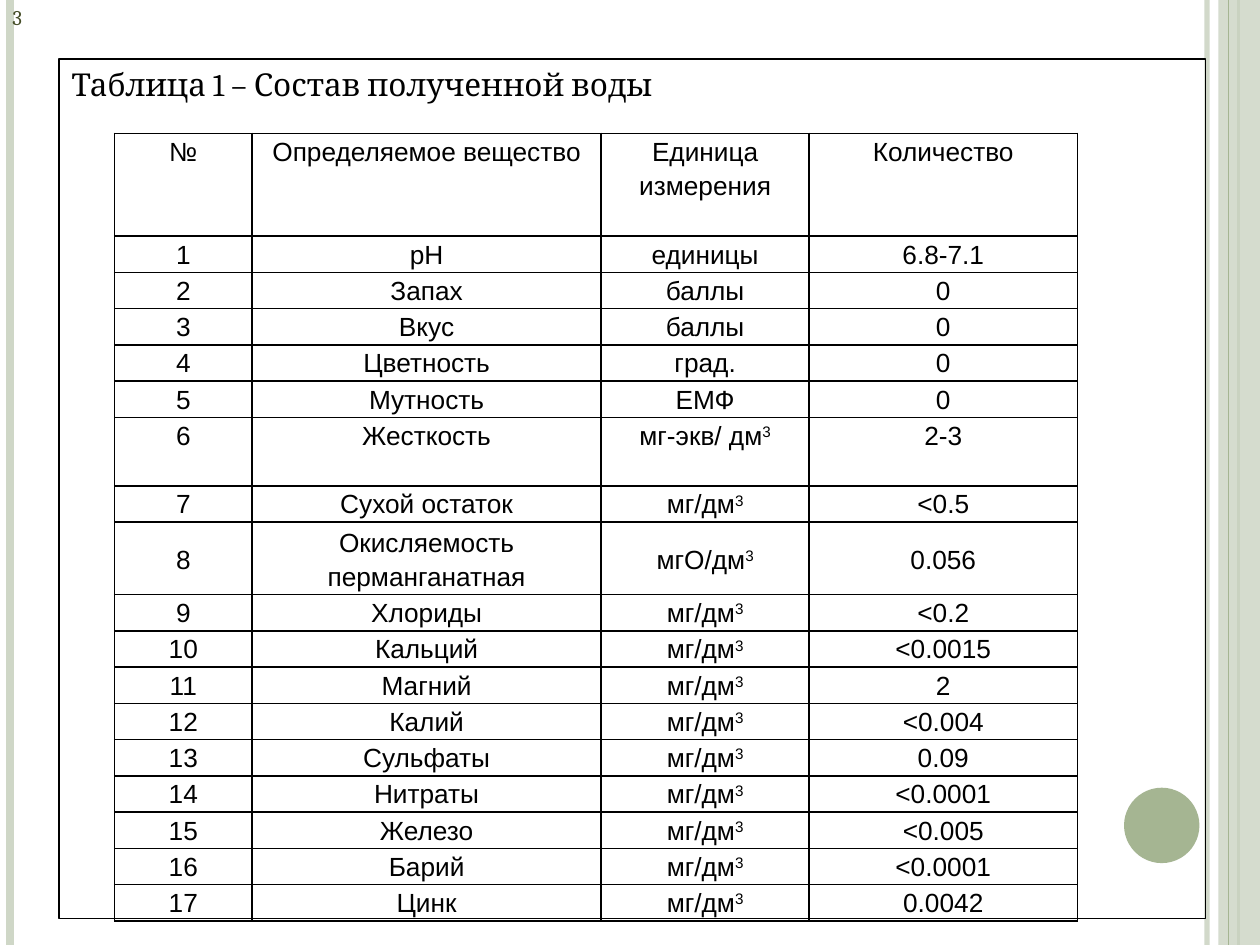
"""Build a slide with a table of the composition of treated water."""
from lxml import etree
from pptx import Presentation
from pptx import util as u
from pptx.dml.color import RGBColor
from pptx.enum import shapes, text
from pptx.oxml.ns import qn

BLACK, GREEN, PALE, DARK = "000000", "A5B592", "CFD7C7", "444D26"
PAGE_WIDTH, PAGE_HEIGHT = 25.4, 19.05
COLUMN_WIDTHS = [2.77, 7.04, 4.19, 5.41]
ROW_HEIGHT = 0.69
ROW_SPANS = {0: 3, 6: 2, 8: 2}
MIDDLE_ROW = 8
STRIPES = [(24.33, PALE, 3, 93), (0.2, PALE, 4.5, 100),
           (24.97, GREEN, 1.5, 100), (24.77, GREEN, 0.75, 100)]
HEADER = ["№", "Определяемое вещество", "Единица измерения", "Количество"]
SUBSTANCES = [
    ("pH", "единицы", "6.8-7.1"),
    ("Запах", "баллы", "0"),
    ("Вкус", "баллы", "0"),
    ("Цветность", "град.", "0"),
    ("Мутность", "ЕМФ", "0"),
    ("Жесткость", "мг-экв/ дм^3", "2-3"),
    ("Сухой остаток", "мг/дм^3", "<0.5"),
    ("Окисляемость перманганатная", "мгО/дм^3", "0.056"),
    ("Хлориды", "мг/дм^3", "<0.2"),
    ("Кальций", "мг/дм^3", "<0.0015"),
    ("Магний", "мг/дм^3", "2"),
    ("Калий", "мг/дм^3", "<0.004"),
    ("Сульфаты", "мг/дм^3", "0.09"),
    ("Нитраты", "мг/дм^3", "<0.0001"),
    ("Железо", "мг/дм^3", "<0.005"),
    ("Барий", "мг/дм^3", "<0.0001"),
    ("Цинк", "мг/дм^3", "0.0042"),
]


def color(value):
    """Turn a hex string into a colour."""
    return RGBColor.from_string(value)


def apply(target, values):
    """Set each named attribute of the target."""
    for name, value in values.items():
        setattr(target, name, value)


def set_alpha(holder, percent):
    """Make the solid colour inside an element partly transparent."""
    if percent < 100:
        tint = next(holder.iter(qn("a:srgbClr")))
        etree.SubElement(tint, qn("a:alpha"), val=str(percent * 1000))


class Painter:
    """Hold the style and the current page, and draw elements on it."""

    heading_font, table_font = "Cambria", "Arial"

    def __init__(self, page):
        """Remember the page."""
        self.page = page

    def add_words(self, para, words, size, font, tint=BLACK):
        """Add text to a paragraph, raising what follows a caret."""
        for index, part in enumerate(words.split("^")):
            span = para.add_run()
            span.text = part
            apply(span.font, {"size": u.Pt(size), "name": font})
            span.font.color.rgb = color(tint)
            if index:
                span.font._element.set("baseline", "30000")

    def stripe(self, x, tint, width, opacity):
        """Draw a vertical line over the whole page height."""
        line = self.page.shapes.add_connector(
            shapes.MSO_CONNECTOR.STRAIGHT, u.Cm(x), 0, u.Cm(x), u.Cm(PAGE_HEIGHT))
        line.line.color.rgb = color(tint)
        line.line.width = u.Pt(width)
        properties = line._element.spPr
        set_alpha(properties, opacity)
        etree.SubElement(properties, qn("a:effectLst"))

    def shape(self, kind, place, tint, opacity=100):
        """Draw a filled shape without an outline."""
        box = self.page.shapes.add_shape(kind, *map(u.Cm, place))
        box.shadow.inherit = False
        box.fill.solid()
        box.fill.fore_color.rgb = color(tint)
        box.line.fill.background()
        set_alpha(box._element.spPr, opacity)

    def body(self, words, place):
        """Frame the body placeholder and put the table caption in it."""
        box = self.page.placeholders[1]
        apply(box, dict(zip(("left", "top", "width", "height"), map(u.Cm, place))))
        box.line.color.rgb = color(BLACK)
        box.line.width = u.Pt(0.75)
        box.text_frame.auto_size = text.MSO_AUTO_SIZE.NONE
        para = box.text_frame.paragraphs[0]
        para.space_before = u.Pt(6)
        properties = para._p.get_or_add_pPr()
        indent = u.Cm(0.76)
        properties.set("marL", str(indent))
        properties.set("indent", str(-indent))
        etree.SubElement(properties, qn("a:buNone"))
        self.add_words(para, words, 18, self.heading_font)
        self.page.shapes._spTree.append(box._element)

    def number(self, words, place):
        """Add the page number."""
        box = self.page.shapes.add_textbox(*map(u.Cm, place))
        apply(box.text_frame, {"word_wrap": True,
                               "vertical_anchor": text.MSO_ANCHOR.MIDDLE})
        self.add_words(box.text_frame.paragraphs[0], words, 12, self.heading_font, DARK)

    def border(self, cell):
        """Draw all four borders of a cell."""
        properties = cell._tc.get_or_add_tcPr()
        for side in ("lnL", "lnR", "lnT", "lnB"):
            line = etree.SubElement(properties, qn("a:" + side), w=str(u.Pt(1)))
            fill = etree.SubElement(line, qn("a:solidFill"))
            etree.SubElement(fill, qn("a:srgbClr"), val=BLACK)

    def cell(self, cell, words, anchor):
        """Format a table cell and fill in its text."""
        margins = dict.fromkeys(
            ("margin_left", "margin_right", "margin_top", "margin_bottom"), 0)
        apply(cell, {**margins, "vertical_anchor": anchor})
        self.border(cell)
        cell.fill.background()
        para = cell.text_frame.paragraphs[0]
        apply(para, {"alignment": text.PP_ALIGN.CENTER, "line_spacing": 1.15,
                     "space_after": u.Pt(10)})
        self.add_words(para, words, 15, self.table_font)

    def table(self, rows, left, top):
        """Draw the bordered table."""
        heights = [ROW_HEIGHT * ROW_SPANS.get(i, 1) for i in range(len(rows))]
        place = (left, top, sum(COLUMN_WIDTHS), sum(heights))
        table = self.page.shapes.add_table(
            len(rows), len(COLUMN_WIDTHS), *map(u.Cm, place)).table
        apply(table, {"first_row": False, "horz_banding": False})
        for column, width in zip(table.columns, COLUMN_WIDTHS):
            column.width = u.Cm(width)
        for i, (row, height) in enumerate(zip(table.rows, heights)):
            row.height = u.Cm(height)
            anchor = text.MSO_ANCHOR.MIDDLE if i == MIDDLE_ROW else text.MSO_ANCHOR.TOP
            for cell, words in zip(row.cells, rows[i]):
                self.cell(cell, words, anchor)


def main():
    """Build and save the deck."""
    deck = Presentation()
    apply(deck, {"slide_width": u.Cm(PAGE_WIDTH), "slide_height": u.Cm(PAGE_HEIGHT)})
    page = deck.slides.add_slide(deck.slide_layouts[1])
    title = page.shapes.title._element
    title.getparent().remove(title)
    painter = Painter(page)
    for stripe in STRIPES[:3]:
        painter.stripe(*stripe)
    painter.shape(shapes.MSO_SHAPE.RECTANGLE, (24.56, 0, 0.84, PAGE_HEIGHT), PALE, 87)
    painter.stripe(*STRIPES[3])
    painter.shape(shapes.MSO_SHAPE.OVAL, (22.66, 15.88, 1.52, 1.52), GREEN)
    painter.body("Таблица 1 – Состав полученной воды", (1.19, 1.19, 23.11, 17.32))
    painter.number("3", (0, 0, 1.7, 0.71))
    rows = [(str(i), *row) for i, row in enumerate(SUBSTANCES, 1)]
    painter.table([HEADER, *rows], 2.31, 2.69)
    deck.save("out.pptx")


if __name__ == "__main__":
    main()
